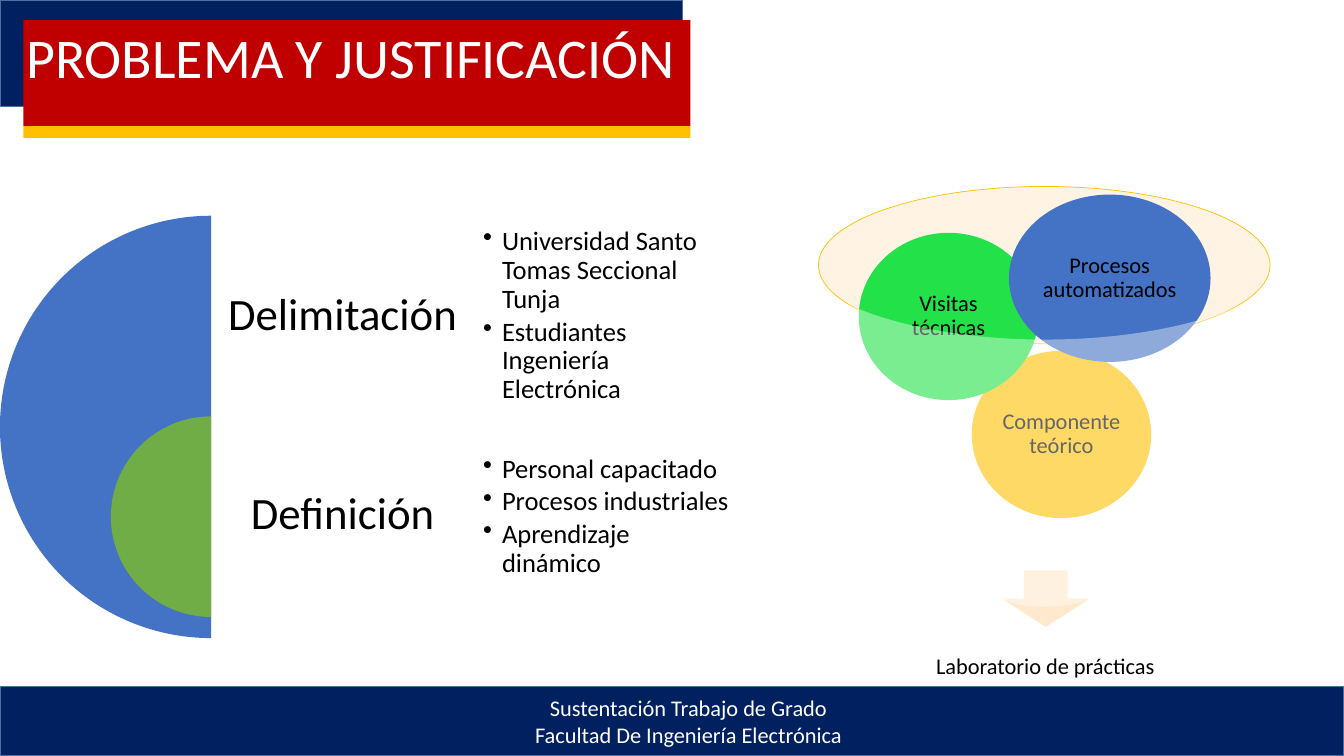
from dataclasses import dataclass

from pptx import Presentation
from pptx.dml.color import RGBColor
from pptx.enum.shapes import MSO_SHAPE
from pptx.enum.text import MSO_ANCHOR, MSO_AUTO_SIZE, PP_ALIGN
from pptx.oxml.ns import qn
from pptx.oxml.xmlchemy import OxmlElement
from pptx.shapes.autoshape import Shape
from pptx.slide import Slide
from pptx.util import Pt

RECTANGLE = MSO_SHAPE.RECTANGLE
ELLIPSE = MSO_SHAPE.OVAL
PIE = MSO_SHAPE.PIE
DOWN_ARROW = MSO_SHAPE.DOWN_ARROW
FUNNEL = MSO_SHAPE.FUNNEL
TOP, MIDDLE = MSO_ANCHOR.TOP, MSO_ANCHOR.MIDDLE
LEFT, CENTER = PP_ALIGN.LEFT, PP_ALIGN.CENTER

NAVY = RGBColor(0x00, 0x20, 0x60)
STEEL = RGBColor(0x43, 0x73, 0x9E)
RED = RGBColor(0xC0, 0x00, 0x00)
GOLD = RGBColor(0xFF, 0xC0, 0x00)
BLUE = RGBColor(0x44, 0x72, 0xC4)
OLIVE = RGBColor(0x70, 0xAD, 0x47)
GREEN = RGBColor(0x23, 0xE1, 0x48)
CREAM = RGBColor(0xFF, 0xE2, 0xBD)
PEACH = RGBColor(0xFF, 0xE8, 0xCC)
WHITE = RGBColor(0xFF, 0xFF, 0xFF)
BLACK = RGBColor(0x00, 0x00, 0x00)

FONT = "Calibri"
HALF_DISC = (54, 162)
BULLET_INDENT = 13.5
LABEL_LEFT, LIST_LEFT = 150.8, 339.1
COLUMN_WIDTH, ROW_HEIGHT = 188, 143.3


@dataclass(frozen=True)
class Area:
    left: float
    top: float
    width: float
    height: float

    def lengths(self) -> tuple[Pt, Pt, Pt, Pt]:
        return Pt(self.left), Pt(self.top), Pt(self.width), Pt(self.height)


@dataclass(frozen=True)
class Figure:
    kind: MSO_SHAPE
    area: Area
    fill: RGBColor
    line: RGBColor | None = None
    line_width: float = 1
    opacity: int = 100
    adjustments: tuple[float, ...] = ()
    label: str = ""


@dataclass(frozen=True)
class TextStyle:
    size: float
    color: RGBColor = BLACK
    align: PP_ALIGN = CENTER
    anchor: MSO_ANCHOR = MIDDLE
    margins: tuple[float, float] = (7.2, 3.6)
    line_spacing: float = 0.9
    space_after: float = 0
    bulleted: bool = False


@dataclass(frozen=True)
class Topic:
    label: str
    label_top: float
    list_top: float
    items: tuple[str, ...]


TITLE_STYLE = TextStyle(40, WHITE, LEFT, TOP)
FOOTER_STYLE = TextStyle(16, WHITE, line_spacing=1)
TOPIC_STYLE = TextStyle(32, margins=(9.6, 9.6))
LIST_STYLE = TextStyle(19, align=LEFT, margins=(6, 6), space_after=2.85, bulleted=True)
RESULT_STYLE = TextStyle(16, margins=(9, 9))
CIRCLE_STYLE = TextStyle(16, margins=(1.6, 1.6))

BANNERS = (
    Figure(RECTANGLE, Area(0, 490.3, 960, 49.7), NAVY, STEEL),
    Figure(RECTANGLE, Area(16.6, 90, 476.6, 8.6), GOLD),
    Figure(RECTANGLE, Area(0, 0, 487.4, 76.3), NAVY, STEEL),
    Figure(RECTANGLE, Area(16.6, 14.4, 476.6, 75.6), RED),
)
HALF_DISCS = (
    Figure(PIE, Area(0, 154.1, 301.7, 301.7), BLUE, adjustments=HALF_DISC),
    Figure(PIE, Area(79.2, 297.4, 143.3, 143.3), OLIVE, adjustments=HALF_DISC),
)
TOPICS = (
    Topic("Delimitación", 154.1, 154.1,
          ("Universidad Santo Tomas Seccional Tunja", "Estudiantes Ingeniería Electrónica")),
    Topic("Definición", 295.9, 297.4,
          ("Personal capacitado", "Procesos industriales", "Aprendizaje dinámico")),
)
FUNNEL_FIGURES = (
    Figure(ELLIPSE, Area(584.6, 133.2, 322.6, 112.3), CREAM, GOLD, 0.5, 40),
    Figure(DOWN_ARROW, Area(715.7, 407.5, 62.6, 40.3), PEACH),
    Figure(ELLIPSE, Area(694.1, 250.6, 128.2, 119.5), GOLD, label="Componente teórico"),
    Figure(ELLIPSE, Area(613.4, 166.3, 128.2, 119.5), GREEN, label="Visitas técnicas"),
    Figure(ELLIPSE, Area(720.7, 139, 144, 119.5), BLUE, label="Procesos automatizados"),
    Figure(FUNNEL, Area(546.5, 86.4, 400.3, 347), WHITE, opacity=40),
)


def apply_format(target: object, values: dict[str, object]) -> None:
    for name, value in values.items():
        setattr(target, name, value)


def write_text(box: Shape, lines: tuple[str, ...], style: TextStyle) -> None:
    side, edge = (Pt(margin) for margin in style.margins)
    frame = box.text_frame
    apply_format(frame, {
        "word_wrap": True, "auto_size": MSO_AUTO_SIZE.NONE,
        "vertical_anchor": style.anchor,
        "margin_left": side, "margin_right": side,
        "margin_top": edge, "margin_bottom": edge,
    })
    for index, line in enumerate(lines):
        para = frame.add_paragraph() if index else frame.paragraphs[0]
        apply_format(para, {
            "alignment": style.align, "line_spacing": style.line_spacing,
            "space_before": Pt(0), "space_after": Pt(style.space_after),
        })
        if style.bulleted:
            properties = para._p.get_or_add_pPr()
            properties.set("marL", str(Pt(BULLET_INDENT)))
            properties.set("indent", str(-Pt(BULLET_INDENT)))
            bullet = OxmlElement("a:buChar")
            bullet.set("char", "•")
            properties.append(bullet)
        span = para.add_run()
        span.text = line
        apply_format(span.font, {"name": FONT, "size": Pt(style.size)})
        span.font.color.rgb = style.color


def add_text(page: Slide, area: Area, lines: tuple[str, ...], style: TextStyle) -> None:
    write_text(page.shapes.add_textbox(*area.lengths()), lines, style)


def add_figure(page: Slide, figure: Figure) -> None:
    shape = page.shapes.add_shape(figure.kind, *figure.area.lengths())
    shape.shadow.inherit = False
    for index, value in enumerate(figure.adjustments):
        shape.adjustments[index] = value
    shape.fill.solid()
    shape.fill.fore_color.rgb = figure.fill
    if figure.opacity < 100:
        alpha = OxmlElement("a:alpha")
        alpha.set("val", str(figure.opacity * 1000))
        next(shape.element.iter(qn("a:srgbClr"))).append(alpha)
    if figure.line is None:
        shape.line.fill.background()
    else:
        shape.line.color.rgb = figure.line
        shape.line.width = Pt(figure.line_width)
    if figure.label:
        write_text(shape, (figure.label,), CIRCLE_STYLE)


def add_title(page: Slide, area: Area, text: str) -> None:
    title = page.shapes.title
    names = ("left", "top", "width", "height")
    apply_format(title, dict(zip(names, area.lengths())))
    write_text(title, (text,), TITLE_STYLE)
    page.shapes[-1].element.addnext(title.element)


def add_topic(page: Slide, topic: Topic) -> None:
    label_area = Area(LABEL_LEFT, topic.label_top, COLUMN_WIDTH, ROW_HEIGHT)
    list_area = Area(LIST_LEFT, topic.list_top, COLUMN_WIDTH, ROW_HEIGHT)
    add_text(page, label_area, (topic.label,), TOPIC_STYLE)
    add_text(page, list_area, topic.items, LIST_STYLE)


def main() -> None:
    deck = Presentation()
    deck.slide_width, deck.slide_height = Pt(960), Pt(540)
    page = deck.slides.add_slide(deck.slide_layouts.get_by_name("Title Only"))
    for banner in BANNERS:
        add_figure(page, banner)
    add_title(page, Area(11.5, 18, 588, 75.6), "PROBLEMA Y JUSTIFICACIÓN")
    add_text(page, Area(329.8, 500.4, 324, 28.8),
             ("Sustentación Trabajo de Grado", "Facultad De Ingeniería Electrónica"), FOOTER_STYLE)
    for figure in HALF_DISCS + FUNNEL_FIGURES:
        add_figure(page, figure)
    for topic in TOPICS:
        add_topic(page, topic)
    add_text(page, Area(575.3, 437, 342.7, 79.2), ("Laboratorio de prácticas",), RESULT_STYLE)
    deck.save("out.pptx")


if __name__ == "__main__":
    main()
